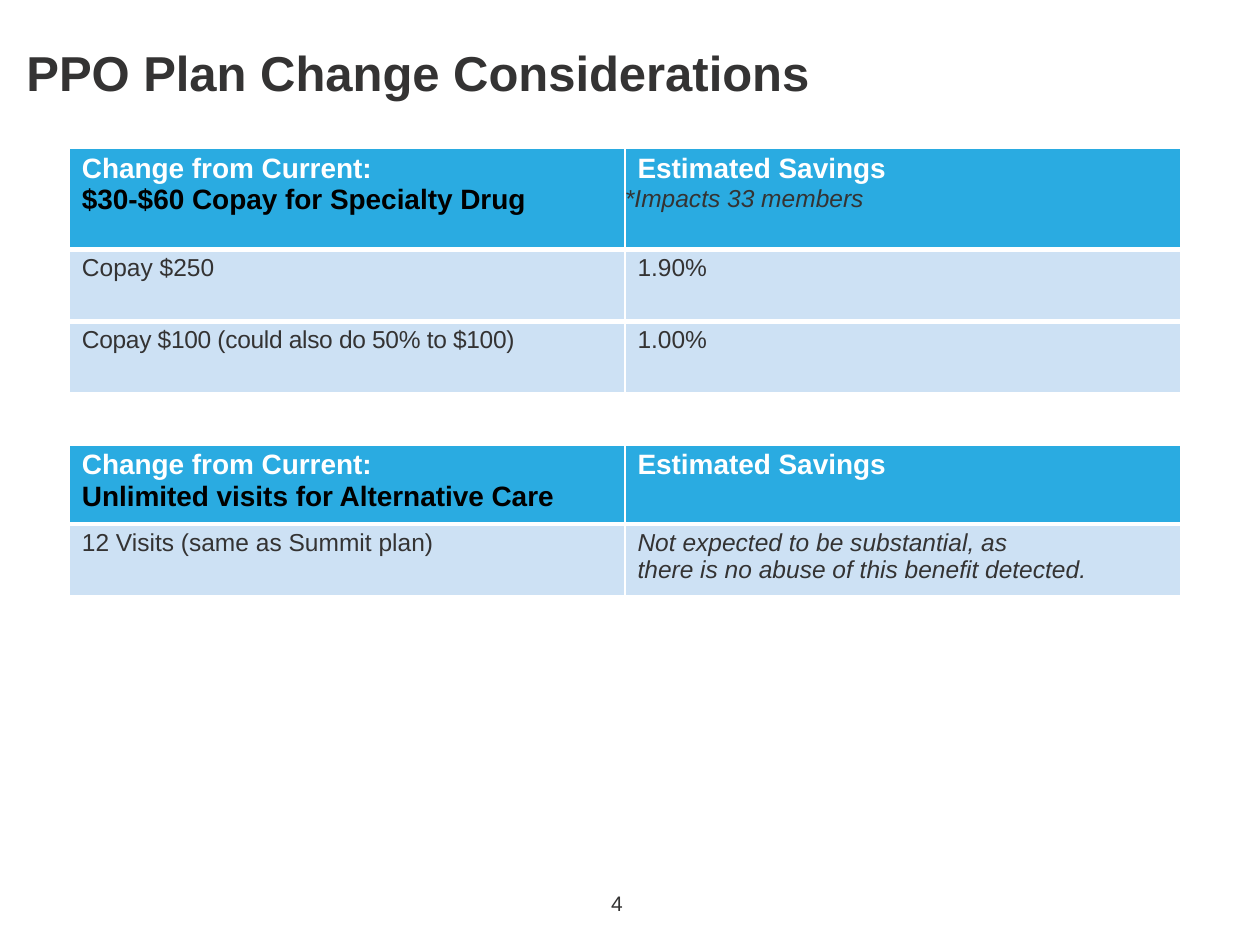
from lxml import etree
from pptx import Presentation
from pptx.dml.color import RGBColor
from pptx.oxml.ns import qn
from pptx.util import Inches, Pt

WHITE = RGBColor(0xFF, 0xFF, 0xFF)
BLACK = RGBColor(0, 0, 0)
DARK = RGBColor(0x34, 0x33, 0x33)
BLUE = RGBColor(0x2A, 0xAB, 0xE1)
PALE = RGBColor(0xCD, 0xE1, 0xF4)
FONT = "Arial"

# Text styles: size, colour, bold, italic, indent, letter spacing
TITLE = (28, DARK, True, False, 0.12, 0)
NUMBER = (12, DARK, False, False, 0.04, 0)
HEAD = (16, WHITE, True, False, 0.1, 0)
CURRENT = (16, BLACK, True, False, 0.1, 0)
BODY = (14, DARK, False, False, 0.1, 0)
TIGHT = (14, DARK, False, False, 0.1, -0.2)
REMARK = (14, DARK, False, True, 0.1, 0)
IMPACT = (14, DARK, False, True, 0, 0)

# Tables: top, row heights, rows of cells, each cell a list of (line, style)
TABLES = [
    (1.18, [0.8, 0.57, 0.57], [
        ([("Change from Current:", HEAD),
          ("$30-$60 Copay for Specialty Drug", CURRENT)],
         [("Estimated Savings", HEAD), ("*Impacts 33 members", IMPACT)]),
        ([("Copay $250", BODY)], [("1.90%", BODY)]),
        ([("Copay $100 (could also do 50% to $100)", TIGHT)],
         [("1.00%", BODY)]),
    ]),
    (3.53, [0.63, 0.57], [
        ([("Change from Current:", HEAD),
          ("Unlimited visits for Alternative Care", CURRENT)],
         [("Estimated Savings", HEAD)]),
        ([("12 Visits (same as Summit plan)", BODY)],
         [("Not expected to be substantial, as", REMARK),
          ("there is no abuse of this benefit detected.", REMARK)]),
    ]),
]
LEFT, COL_WIDTH = 0.55, 4.41


def write(tf, lines):
    for i, (line, (size, color, bold, italic, indent, spacing)) in enumerate(lines):
        p = tf.paragraphs[0] if i == 0 else tf.add_paragraph()
        p.text = line
        p._p.get_or_add_pPr().set("marL", str(Inches(indent)))
        r = p.runs[0]
        r.font.name, r.font.size = FONT, Pt(size)
        r.font.bold, r.font.italic = bold, italic
        r.font.color.rgb = color
        if spacing:
            r._r.get_or_add_rPr().set("spc", str(round(spacing * 100)))


def add_text(s, box, top_inset, line):
    tf = s.shapes.add_textbox(*map(Inches, box)).text_frame
    tf.word_wrap = True
    tf.margin_left = tf.margin_right = tf.margin_bottom = 0
    tf.margin_top = Inches(top_inset)
    write(tf, [line])


def set_borders(cell, top, bottom):
    tcPr = cell._tc.get_or_add_tcPr()
    for i, (side, width) in enumerate(
            [("lnL", 1), ("lnR", 1), ("lnT", top), ("lnB", bottom)]):
        ln = etree.Element(qn("a:" + side), w=str(Pt(width)))
        fill = etree.SubElement(ln, qn("a:solidFill"))
        etree.SubElement(fill, qn("a:srgbClr"), val=str(WHITE))
        tcPr.insert(i, ln)


def add_savings_table(s, top, heights, rows):
    frame = s.shapes.add_table(len(rows), 2, Inches(LEFT), Inches(top),
                               Inches(2 * COL_WIDTH), Inches(sum(heights)))
    table = frame.table
    for col in table.columns:
        col.width = Inches(COL_WIDTH)
    for i, (height, row) in enumerate(zip(heights, rows)):
        table.rows[i].height = Inches(height)
        for j, lines in enumerate(row):
            cell = table.cell(i, j)
            cell.margin_left = cell.margin_right = cell.margin_bottom = 0
            cell.margin_top = Inches(0.04)
            cell.fill.solid()
            cell.fill.fore_color.rgb = PALE if i else BLUE
            # Thick rules between rows, thin ones on the outside
            set_borders(cell, 3 if i else 1, 3 if i < len(rows) - 1 else 1)
            write(cell.text_frame, lines)


def main():
    prs = Presentation()
    prs.slide_width, prs.slide_height = Inches(10), Inches(7.5)
    s = prs.slides.add_slide(prs.slide_layouts[6])

    # Title and page number
    add_text(s, (0.09, 0.12, 6.6, 0.74), 0.22,
             ("PPO Plan Change Considerations", TITLE))
    add_text(s, (4.81, 7.07, 0.19, 0.21), 0, ("4", NUMBER))

    # Savings tables
    for top, heights, rows in TABLES:
        add_savings_table(s, top, heights, rows)

    prs.save("out.pptx")


if __name__ == "__main__":
    main()
